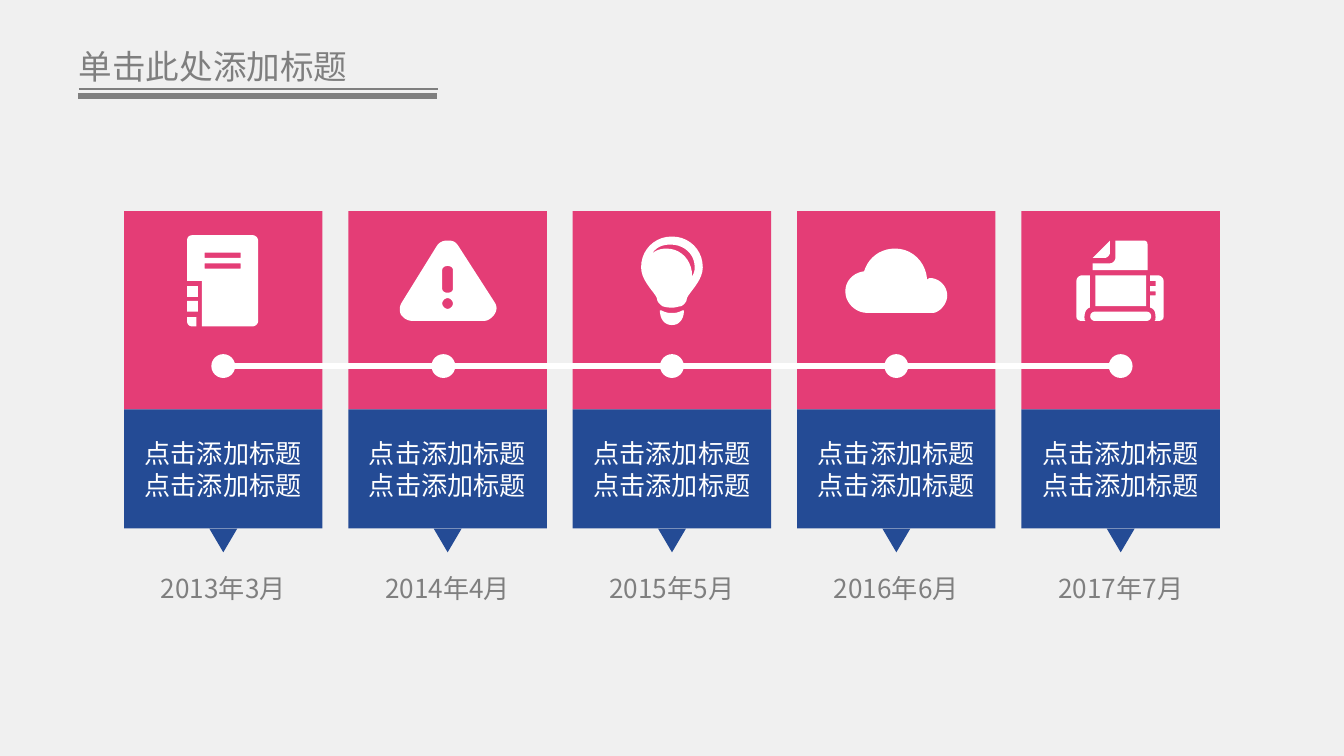
from lxml.etree import SubElement
from pptx import Presentation
from pptx.dml.color import RGBColor
from pptx.enum.shapes import MSO_CONNECTOR, MSO_SHAPE
from pptx.enum.text import MSO_ANCHOR, PP_ALIGN
from pptx.oxml.ns import qn
from pptx.util import Cm, Pt

COLORS = {"back": "F0F0F0", "pink": "E43D76", "blue": "244B95",
          "white": "FFFFFF", "gray": "7F7F7F"}
FONT = "Noto Sans CJK SC"
GRID = 148  # icon units across the width of a card

# Icon parts: a 4-tuple is a rectangle (left, top, width, height), a list holds
# closed contours made of points (2 numbers) and Bezier curves (6 numbers).
NOTEBOOK = [
    [[(54, 86), (51, 86), (48, 86, 47, 84, 47, 82), (47, 79), (54, 79)]],
    [[(51, 18), (96, 18), (98, 18, 100, 20, 100, 22), (100, 82),
      (100, 84, 98, 86, 96, 86), (58, 86), (58, 52), (47, 52), (47, 22),
      (47, 20, 48, 18, 51, 18)],
     [(60, 43), (87, 43), (87, 39), (60, 39)],
     [(60, 35), (87, 35), (87, 31), (60, 31)]],
    (47, 56, 8, 8),
    (47, 67, 8, 8),
]
WARNING = [
    [[(66, 26), (68, 23, 71, 22, 74, 22), (78, 22, 80, 23, 82, 26), (109, 68),
      (111, 71, 111, 74, 109, 77), (107, 80, 104, 82, 101, 82), (48, 82),
      (44, 82, 41, 80, 39, 77), (38, 74, 38, 71, 40, 68)],
     [(74, 73), (76, 73, 78, 71, 78, 69), (78, 67, 76, 65, 74, 65),
      (72, 65, 70, 67, 70, 69), (70, 71, 72, 73, 74, 73)],
     [(70, 58), (70, 60, 72, 61, 74, 61), (76, 61, 78, 60, 78, 58), (78, 44),
      (78, 42, 76, 41, 74, 41), (72, 41, 70, 42, 70, 44)]],
]
BULB = [
    [[(66, 74), (68, 75, 70, 76, 73, 76), (75, 76), (78, 76, 80, 75, 82, 74),
      (83, 74), (83, 80, 80, 85, 74, 85), (68, 85, 65, 80, 65, 74)]],
    [[(74, 19), (87, 19, 97, 29, 97, 42), (97, 53, 85, 62, 85, 66),
      (85, 67, 84, 69, 81, 71), (79, 71, 77, 72, 75, 72), (74, 72),
      (72, 72, 70, 72, 67, 71), (64, 69, 63, 67, 63, 66),
      (63, 62, 51, 53, 51, 42), (51, 29, 61, 19, 74, 19)],
     [(70, 28), (81, 28, 89, 37, 89, 48), (89, 49), (90, 47, 91, 45, 91, 42),
      (91, 32, 83, 25, 73, 25), (67, 25, 62, 27, 59, 32),
      (62, 29, 66, 28, 70, 28)]],
]
CLOUD = [
    [[(50, 45), (53, 35, 62, 28, 73, 28), (86, 28, 96, 38, 97, 51),
      (98, 51, 98, 50, 99, 50), (106, 50, 112, 56, 112, 63),
      (112, 69, 107, 75, 102, 76), (52, 76), (44, 76, 36, 69, 36, 60),
      (36, 52, 42, 46, 50, 45)]],
]
PRINTER = [
    [[(45, 48), (51, 48), (51, 72), (48, 73, 47, 76, 47, 79),
      (47, 81, 47, 82, 48, 82), (45, 82), (43, 82, 41, 81, 41, 79), (41, 52),
      (41, 50, 43, 48, 45, 48)]],
    [[(55, 75), (93, 75), (98, 75, 98, 82, 93, 82), (55, 82),
      (50, 82, 50, 75, 55, 75)]],
    [[(96, 72), (96, 63), (100, 63), (100, 60), (96, 60), (96, 56), (100, 56),
      (100, 52), (96, 52), (96, 48), (102, 48), (104, 48, 106, 50, 106, 52),
      (106, 79), (106, 81, 104, 82, 102, 82), (99, 82),
      (100, 82, 100, 81, 100, 79), (100, 75, 99, 73, 96, 72)]],
    [[(62, 35), (53, 35), (66, 22), (66, 31), (66, 33, 64, 35, 62, 35)]],
    [[(53, 39), (66, 39), (68, 39, 70, 37, 70, 35), (70, 22), (91, 22),
      (93, 22, 94, 23, 94, 25), (94, 44), (53, 44)]],
    (55, 48, 38, 23),
]
MILESTONES = [("2013年3月", NOTEBOOK), ("2014年4月", WARNING), ("2015年5月", BULB),
              ("2016年6月", CLOUD), ("2017年7月", PRINTER)]


def paint(shape, color):
    shape.shadow.inherit = False
    shape.fill.solid()
    shape.fill.fore_color.rgb = RGBColor.from_string(COLORS[color])
    shape.line.fill.background()


def add_block(slide, kind, left, top, width, height, color):
    block = slide.shapes.add_shape(kind, left, top, width, height)
    paint(block, color)
    return block


def write(frame, lines, size, color, align):
    for number, line in enumerate(lines):
        paragraph = frame.add_paragraph() if number else frame.paragraphs[0]
        paragraph.alignment = align
        run = paragraph.add_run()
        run.text = line
        run.font.size = Pt(size)
        run.font.name = FONT
        run.font.color.rgb = RGBColor.from_string(COLORS[color])
        SubElement(run.font._element, qn("a:ea"), typeface=FONT)


def set_insets(frame):
    frame.margin_left = frame.margin_right = Cm(0.18)
    frame.margin_top = frame.margin_bottom = Cm(0.1)


def flatten(contour, steps=10):
    """Turn the curves of a contour into short straight segments."""
    points = [contour[0]]
    for step in contour[1:]:
        if len(step) == 2:
            points.append(step)
            continue
        corners = [points[-1], step[:2], step[2:4], step[4:]]
        for i in range(1, steps + 1):
            t = i / steps
            weights = ((1 - t)**3, 3 * t * (1 - t)**2, 3 * t**2 * (1 - t), t**3)
            points.append(tuple(sum(w * corner[axis] for w, corner in zip(weights, corners))
                                for axis in (0, 1)))
    return points


def draw_icon(slide, icon, left, top, width):
    unit = width / GRID
    for part in icon:
        if isinstance(part, tuple):
            x, y, w, h = (int(value * unit) for value in part)
            add_block(slide, MSO_SHAPE.RECTANGLE, left + x, top + y, w, h, "white")
            continue
        outline = None
        for contour in part:
            points = [(left + x * unit, top + y * unit) for x, y in flatten(contour)]
            if outline is None:
                outline = slide.shapes.build_freeform(*points[0])
            else:
                outline.move_to(*points[0])
            outline.add_line_segments(points[1:], close=True)
        paint(outline.convert_to_shape(), "white")


def draw_card(slide, date, icon, left, top, width):
    center = left + width // 2
    label_top, label_height = top + width, Cm(2.25)
    add_block(slide, MSO_SHAPE.RECTANGLE, left, top, width, width, "pink")
    label = add_block(slide, MSO_SHAPE.RECTANGLE, left, label_top, width, label_height, "blue")
    label.text_frame.vertical_anchor = MSO_ANCHOR.MIDDLE
    label.text_frame.word_wrap = True
    set_insets(label.text_frame)
    write(label.text_frame, ["点击添加标题"] * 2, 14, "white", PP_ALIGN.CENTER)
    draw_icon(slide, icon, left, top, width)
    # Pointer and date below the card
    pointer = add_block(slide, MSO_SHAPE.ISOSCELES_TRIANGLE, center - Cm(0.53) // 2,
                        label_top + label_height, Cm(0.53), Cm(0.45), "blue")
    pointer.rotation = 180
    date_box = slide.shapes.add_textbox(center - Cm(2.84) // 2, top + Cm(6.73),
                                        Cm(2.84), Cm(0.79))
    date_box.text_frame.word_wrap = True
    set_insets(date_box.text_frame)
    write(date_box.text_frame, [date], 14, "gray", PP_ALIGN.CENTER)


def draw_timeline(slide, centers, middle):
    dot, thickness = Cm(0.45), Cm(0.11)
    for center in centers:
        add_block(slide, MSO_SHAPE.OVAL, center - dot // 2, middle - dot // 2, dot, dot, "white")
    add_block(slide, MSO_SHAPE.RECTANGLE, centers[0], middle - thickness // 2,
              centers[-1] - centers[0], thickness, "white")


def draw_heading(slide, left, top, width, height):
    title = slide.shapes.add_textbox(left, top, width, height)
    title.text_frame.word_wrap = False
    write(title.text_frame, ["单击此处添加标题"], 18, "gray", PP_ALIGN.LEFT)
    # Thin and thick rules under the title
    for start, drop, weight in ((0.25, 0.94, 0.75), (0.23, 1.08, 3)):
        x, y = left + Cm(start), top + Cm(drop)
        rule = slide.shapes.add_connector(MSO_CONNECTOR.STRAIGHT, x, y, x + Cm(6.79), y)
        rule.line.color.rgb = RGBColor.from_string(COLORS["gray"])
        rule.line.width = Pt(weight)
        SubElement(rule._element.spPr, qn("a:effectLst"))


def main():
    deck = Presentation()
    deck.slide_width, deck.slide_height = Cm(25.4), Cm(14.29)
    slide = deck.slides.add_slide(deck.slide_layouts[6])
    slide.background.fill.solid()
    slide.background.fill.fore_color.rgb = RGBColor.from_string(COLORS["back"])

    card_width, pitch, top = Cm(3.75), Cm(4.24), Cm(3.99)
    centers = [deck.slide_width // 2 + (i - 2) * pitch for i in range(len(MILESTONES))]
    for center, (date, icon) in zip(centers, MILESTONES):
        draw_card(slide, date, icon, center - card_width // 2, top, card_width)
    # The second dot sits slightly left of its card's center
    dots = [center - (Cm(0.08) if i == 1 else 0) for i, center in enumerate(centers)]
    draw_timeline(slide, dots, top + Cm(2.93))
    draw_heading(slide, Cm(1.24), Cm(0.74), Cm(5.64), Cm(1.02))
    deck.save("out.pptx")


if __name__ == "__main__":
    main()
